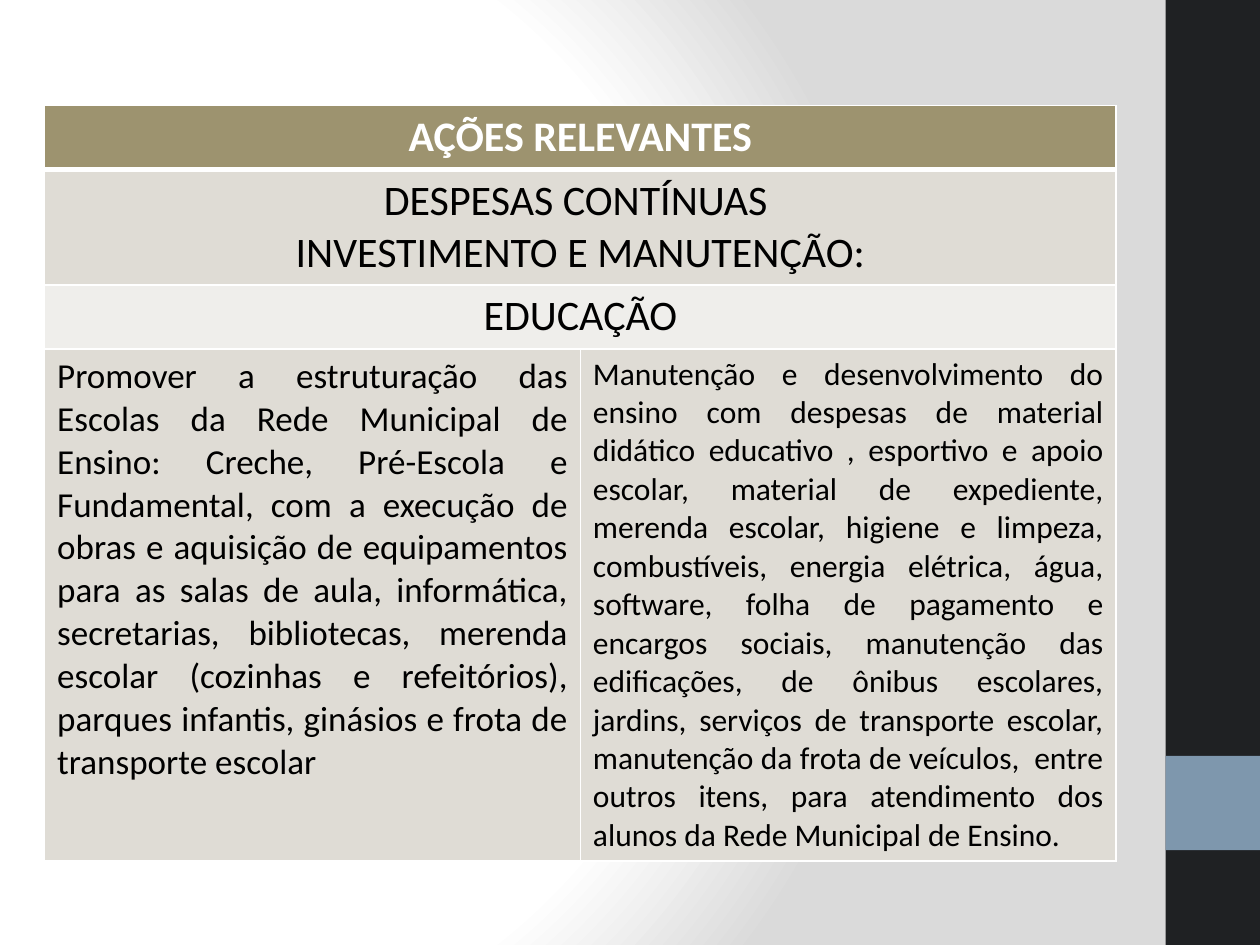
"""Build the slide listing the relevant actions in education."""
from dataclasses import dataclass

from pptx import Presentation
from pptx import util as u
from pptx.dml.color import RGBColor
from pptx.enum import shapes, text
from pptx.oxml import parse_xml
from pptx.oxml.ns import nsdecls, qn

CENTER = text.PP_ALIGN.CENTER
JUSTIFY = text.PP_ALIGN.JUSTIFY


@dataclass(frozen=True)
class Theme:
    font: str = "Calibri"
    white: str = "FFFFFF"
    black: str = "000000"
    backdrop: str = "DADADA"
    side: str = "1F2123"
    accent: str = "7E97AD"
    header: str = "9D936F"
    band: str = "DFDCD5"
    light_band: str = "EFEEEB"
    heading_size: int = 24
    left_size: int = 20
    right_size: int = 18


def write(frame, content, font, size, color, bold=False, align=CENTER):
    for index, line in enumerate(content.split("\n")):
        para = frame.paragraphs[0] if index == 0 else frame.add_paragraph()
        para.alignment = align
        span = para.add_run()
        span.text = line
        span.font.name = font
        span.font.size = u.Pt(size)
        span.font.bold = bold
        span.font.color.rgb = RGBColor.from_string(color)


class SlideBuilder:
    def __init__(self, page, theme):
        self.page = page
        self.theme = theme

    def background(self):
        fill = self.page.background.fill
        fill.gradient()
        gradient = self.page.element.find(".//" + qn("a:gradFill"))
        stops = "".join(
            f'<a:gs pos="{position}"><a:srgbClr val="{color}"/></a:gs>'
            for position, color in (
                (0, self.theme.white),
                (75000, self.theme.white),
                (100000, self.theme.backdrop),
            )
        )
        gradient.getparent().replace(gradient, parse_xml(
            f'<a:gradFill {nsdecls("a")} rotWithShape="1"><a:gsLst>{stops}</a:gsLst>'
            '<a:path path="circle"><a:fillToRect l="20000" t="50000" r="100000" b="50000"/>'
            "</a:path></a:gradFill>"
        ))

    def rectangle(self, left, top, width, height, color):
        box = self.page.shapes.add_shape(
            shapes.MSO_SHAPE.RECTANGLE, u.Cm(left), u.Cm(top), u.Cm(width), u.Cm(height)
        )
        box.shadow.inherit = False
        box.fill.solid()
        box.fill.fore_color.rgb = RGBColor.from_string(color)
        box.line.fill.background()

    def table(self, left, top, widths, heights):
        grid = self.page.shapes.add_table(
            len(heights), len(widths), u.Cm(left), u.Cm(top),
            u.Cm(sum(widths)), u.Cm(sum(heights)),
        ).table
        for column, width in zip(grid.columns, widths):
            column.width = u.Cm(width)
        for row, height in zip(grid.rows, heights):
            row.height = u.Cm(height)
        return grid

    def cell(self, cell, fill, top=1, bottom=1):
        cell.fill.solid()
        cell.fill.fore_color.rgb = RGBColor.from_string(fill)
        properties = cell._tc.get_or_add_tcPr()
        for index, (side, width) in enumerate(
            (("L", 1), ("R", 1), ("T", top), ("B", bottom))
        ):
            properties.insert(index, parse_xml(
                f'<a:ln{side} {nsdecls("a")} w="{u.Pt(width)}"><a:solidFill>'
                f'<a:srgbClr val="{self.theme.white}"/></a:solidFill></a:ln{side}>'
            ))


def main():
    theme = Theme()
    deck = Presentation()
    deck.slide_width, deck.slide_height = u.Cm(25.4), u.Cm(19.05)
    builder = SlideBuilder(deck.slides.add_slide(deck.slide_layouts[6]), theme)
    builder.background()
    builder.rectangle(23.5, 0, 1.9, 19.05, theme.side)
    builder.rectangle(23.5, 15.24, 1.9, 1.9, theme.accent)

    grid = builder.table(0.9, 2.13, [10.8, 10.8], [1.29, 2.32, 1.29, 10.33])
    fills = (theme.header, theme.band, theme.light_band, theme.band)
    for index, (row, fill) in enumerate(zip(grid.rows, fills)):
        for cell in row.cells:
            builder.cell(cell, fill, 3 if index == 1 else 1, 3 if index == 0 else 1)

    headings = (
        "AÇÕES RELEVANTES",
        "DESPESAS CONTÍNUAS \nINVESTIMENTO E MANUTENÇÃO:",
        "EDUCAÇÃO",
    )
    for index, heading in enumerate(headings):
        first = index == 0
        grid.cell(index, 0).merge(grid.cell(index, 1))
        write(grid.cell(index, 0).text_frame, heading, theme.font, theme.heading_size,
              theme.white if first else theme.black, bold=first)

    actions = (
        ("Promover a estruturação das Escolas da Rede Municipal de Ensino: Creche, "
         "Pré-Escola e Fundamental, com a execução de obras e aquisição de equipamentos "
         "para as salas de aula, informática, secretarias, bibliotecas, merenda escolar "
         "(cozinhas e refeitórios), parques infantis, ginásios e frota de transporte escolar",
         theme.left_size),
        ("Manutenção e desenvolvimento do ensino com despesas de material didático "
         "educativo , esportivo e apoio escolar, material de expediente, merenda escolar, "
         "higiene e limpeza, combustíveis, energia elétrica, água, software, folha de "
         "pagamento e encargos sociais, manutenção das edificações, de ônibus escolares, "
         "jardins, serviços de transporte escolar, manutenção da frota de veículos,  entre "
         "outros itens, para atendimento dos alunos da Rede Municipal de Ensino.",
         theme.right_size),
    )
    for column, (action, size) in enumerate(actions):
        write(grid.cell(3, column).text_frame, action, theme.font, size,
              theme.black, align=JUSTIFY)

    deck.save("out.pptx")


if __name__ == "__main__":
    main()
